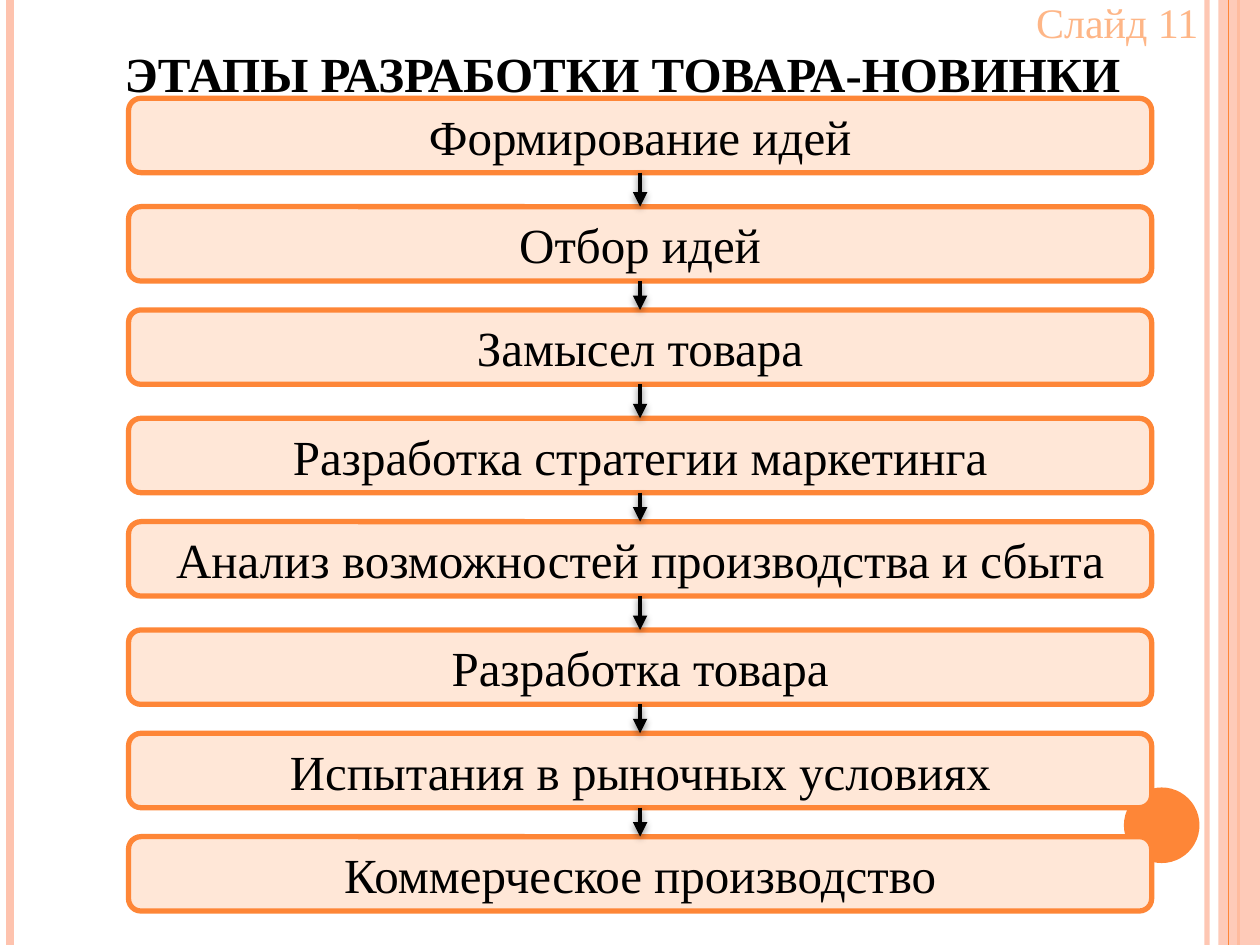
from lxml import etree
from pptx import Presentation
from pptx import util as u
from pptx.dml.color import RGBColor
from pptx.enum import shapes, text
from pptx.oxml import ns

FONT = "Times New Roman"
ORANGE, PINK, CREAM, BLACK = "FE8637", "FEC3AE", "FFE7D7", "000000"


def color(code):
    return RGBColor.from_string(code)


def child(node, tag, **attrs):
    item = etree.SubElement(node, ns.qn(tag))
    for key, val in attrs.items():
        item.set(key, str(val))
    return item


def fade(props, percent):
    """Make the solid colour found in props partly transparent."""
    code = next(props.iter(ns.qn("a:srgbClr")))
    child(code, "a:alpha", val=percent * 1000)


class Page:
    def __init__(self, slide):
        self.slide = slide
        self.items = slide.shapes

    def fill_text(self, frame, words, size, align, anchor, code=BLACK, bold=False):
        frame.text = words
        frame.word_wrap = True
        frame.vertical_anchor = anchor
        para = frame.paragraphs[0]
        para.alignment = align
        font = para.font
        font.name, font.size, font.bold = FONT, u.Pt(size), bold
        font.color.rgb = color(code)

    def title(self, words, box):
        head = self.items.title
        head.left, head.top, head.width, head.height = map(u.Inches, box)
        frame = head.text_frame
        self.fill_text(frame, words, 28, text.PP_ALIGN.CENTER,
                       text.MSO_ANCHOR.BOTTOM, bold=True)
        frame.auto_size = text.MSO_AUTO_SIZE.NONE

    def label(self, words, box, code):
        frame = self.items.add_textbox(*map(u.Inches, box)).text_frame
        self.fill_text(frame, words, 24, text.PP_ALIGN.RIGHT,
                       text.MSO_ANCHOR.TOP, code)

    def shape(self, kind, box, fill, line=None):
        item = self.items.add_shape(kind, *map(u.Inches, box))
        item.shadow.inherit = False
        item.fill.solid()
        item.fill.fore_color.rgb = color(fill)
        if line:
            item.line.color.rgb = color(line)
            item.line.width = u.Pt(3)
        else:
            item.line.fill.background()
        return item

    def step(self, words, box):
        item = self.shape(shapes.MSO_SHAPE.ROUNDED_RECTANGLE, box, CREAM, ORANGE)
        self.fill_text(item.text_frame, words, 28, text.PP_ALIGN.CENTER,
                       text.MSO_ANCHOR.MIDDLE)
        return item

    def line(self, start, end, code, width):
        item = self.items.add_connector(
            shapes.MSO_CONNECTOR.STRAIGHT, *map(u.Inches, start + end))
        item.line.color.rgb = color(code)
        item.line.width = u.Pt(width)
        child(item._element.spPr, "a:effectLst")
        return item

    def arrow(self, first, second):
        item = self.line((0, 0), (0, 0), BLACK, 2.75)
        item.begin_connect(first, 2)
        item.end_connect(second, 0)
        props = item._element.spPr
        child(props.find(ns.qn("a:ln")), "a:tailEnd", type="triangle")
        glow = child(props.find(ns.qn("a:effectLst")), "a:outerShdw",
                     blurRad=u.Pt(4), dist=u.Pt(1.6), dir=90 * 60000,
                     rotWithShape=0)
        child(glow, "a:srgbClr", val=BLACK)
        fade(glow, 42)


def main():
    deck = Presentation()
    deck.slide_width, deck.slide_height = u.Inches(10), u.Inches(7.5)
    page = Page(deck.slides.add_slide(deck.slide_layouts[5]))

    # Side stripes and corner disc
    def stripe(x, code, width):
        return page.line((x, 0), (x, 7.5), code, width)

    fade(stripe(9.58, PINK, 3)._element.spPr, 93)
    stripe(0.08, PINK, 4.5)
    stripe(9.83, ORANGE, 1.5)
    band = page.shape(shapes.MSO_SHAPE.RECTANGLE, (9.67, 0, 0.33, 7.5), PINK)
    fade(band._element.spPr, 87)
    stripe(9.75, ORANGE, 0.75)
    page.shape(shapes.MSO_SHAPE.OVAL, (8.92, 6.25, 0.6, 0.6), ORANGE)

    # Title and slide number
    page.title("ЭТАПЫ РАЗРАБОТКИ ТОВАРА-НОВИНКИ", (0.5, 0.08, 8.88, 0.78))
    page.label("Слайд 11", (7.73, -0.08, 1.88, 0.51), "FEB687")

    # Stages from top to bottom
    stages = [
        (0.78, "Формирование идей"),
        (1.64, "Отбор идей"),
        (2.46, "Замысел товара"),
        (3.32, "Разработка стратегии маркетинга"),
        (4.14, "Анализ возможностей производства и сбыта"),
        (5, "Разработка товара"),
        (5.82, "Испытания в рыночных условиях"),
        (6.64, "Коммерческое производство"),
    ]
    steps = [page.step(words, (1.02, top, 8.12, 0.59)) for top, words in stages]

    # Arrows between neighbours
    for first, second in zip(steps, steps[1:]):
        page.arrow(first, second)

    deck.save("out.pptx")


if __name__ == "__main__":
    main()
